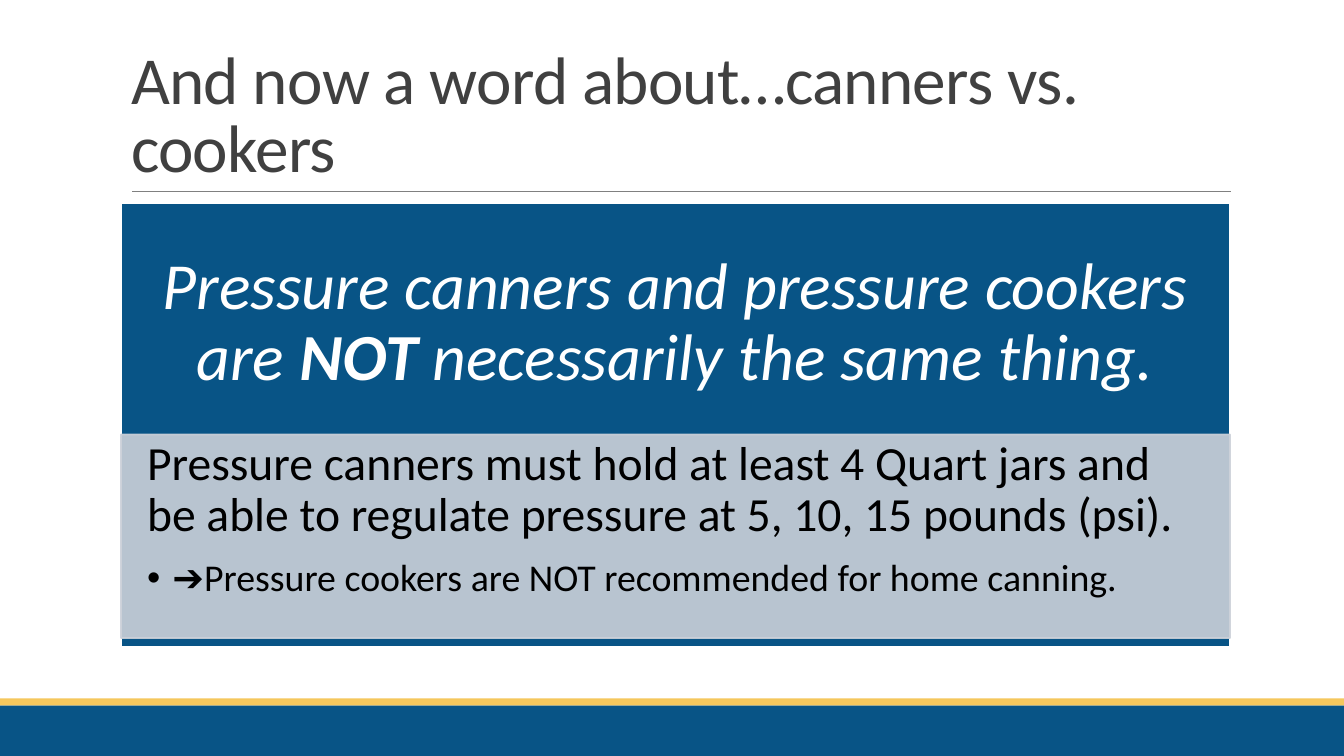
from dataclasses import dataclass

from lxml import etree
from pptx import Presentation
from pptx.dml.color import RGBColor
from pptx.enum.shapes import MSO_CONNECTOR, MSO_SHAPE
from pptx.enum.text import MSO_ANCHOR, MSO_AUTO_SIZE, PP_ALIGN
from pptx.oxml.ns import qn
from pptx.util import Pt

RECTANGLE = MSO_SHAPE.RECTANGLE
STRAIGHT = MSO_CONNECTOR.STRAIGHT
TOP, MIDDLE, BOTTOM = MSO_ANCHOR.TOP, MSO_ANCHOR.MIDDLE, MSO_ANCHOR.BOTTOM
LEFT, CENTER = PP_ALIGN.LEFT, PP_ALIGN.CENTER
NO_FIT = MSO_AUTO_SIZE.NONE

EMU_PER_PX = 9144  # 100 px to the inch
SLIDE_W, SLIDE_H = 1333, 750
PANEL_LEFT, PANEL_W = 120, 1100


@dataclass(frozen=True)
class Theme:
    font: str = "Calibri"
    blue: str = "085486"
    gold: str = "F5C75D"
    mist: str = "CCD1D9"
    rule: str = "808080"
    title_ink: str = "404040"
    white: str = "FFFFFF"
    black: str = "000000"
    title_size: int = 48
    headline_size: int = 47
    body_size: int = 34
    bullet_size: int = 27
    mist_opacity: int = 90


THEME = Theme()


def px(length):
    return length * EMU_PER_PX


def box(*lengths):
    return [px(length) for length in lengths]


def apply(target, values):
    for name, value in values.items():
        setattr(target, name, value)


def set_opacity(color_format_owner, percent):
    """Add an alpha value to the solid colour of a fill or line."""
    for color in color_format_owner.iter(qn("a:srgbClr")):
        etree.SubElement(color, qn("a:alpha")).set("val", str(percent * 1000))


def add_band(slide, bounds, color, outline=None, opacity=None):
    band = slide.shapes.add_shape(RECTANGLE, *box(*bounds))
    band.shadow.inherit = False
    band.fill.solid()
    band.fill.fore_color.rgb = RGBColor.from_string(color)
    if outline:
        band.line.color.rgb = RGBColor.from_string(outline)
        band.line.width = Pt(1.25)
    else:
        band.line.fill.background()
    if opacity:
        set_opacity(band.fill._xPr, opacity)
    return band


def add_rule(slide, left, right, y):
    rule = slide.shapes.add_connector(STRAIGHT, *box(left, y, right, y))
    rule.line.color.rgb = RGBColor.from_string(THEME.rule)
    rule.line.width = Pt(0.5)
    etree.SubElement(rule.line._get_or_add_ln().getparent(), qn("a:effectLst"))


def set_frame(frame, anchor, inset_x, inset_y):
    apply(frame, {
        "word_wrap": True,
        "auto_size": NO_FIT,
        "vertical_anchor": anchor,
        "margin_left": px(inset_x),
        "margin_right": px(inset_x),
        "margin_top": px(inset_y),
        "margin_bottom": px(inset_y),
    })


def write(paragraph, runs, size, color, **layout):
    """Fill a paragraph with (text, font values) runs."""
    apply(paragraph, {"alignment": LEFT, "line_spacing": 0.9,
                      "space_before": Pt(0), **layout})
    for text, emphasis in runs:
        run = paragraph.add_run()
        run.text = text
        apply(run.font, {"name": THEME.font, "size": Pt(size), **emphasis})
        run.font.color.rgb = RGBColor.from_string(color)


def add_bullet(paragraph, hang):
    properties = paragraph._p.get_or_add_pPr()
    properties.set("marL", str(px(hang)))
    properties.set("indent", str(-px(hang)))
    etree.SubElement(properties, qn("a:buFont")).set("typeface", "Arial")
    etree.SubElement(properties, qn("a:buChar")).set("char", "•")


def add_title(slide):
    title = slide.shapes.title
    title.left, title.top, title.width, title.height = box(PANEL_LEFT, 31, PANEL_W, 159)
    set_frame(title.text_frame, BOTTOM, 10, 5)
    heading = title.text_frame.paragraphs[0]
    write(heading, [("And now a word about…canners vs. cookers", {})],
          THEME.title_size, THEME.title_ink, line_spacing=0.85)
    heading.runs[0].font._element.set("spc", "-50")


def add_headline(slide):
    headline = slide.shapes.add_textbox(*box(PANEL_LEFT, 202, PANEL_W, 238))
    set_frame(headline.text_frame, MIDDLE, 37, 37)
    write(headline.text_frame.paragraphs[0], [
        ("Pressure canners and pressure cookers are ", {"italic": True}),
        ("NOT", {"italic": True, "bold": True}),
        (" necessarily the same thing.", {"italic": True}),
    ], THEME.headline_size, THEME.white, alignment=CENTER)


def add_details(slide):
    details = add_band(slide, (PANEL_LEFT, 431, PANEL_W, 202), THEME.mist,
                       outline=THEME.mist, opacity=THEME.mist_opacity)
    set_opacity(details.line._get_or_add_ln(), THEME.mist_opacity)
    frame = details.text_frame
    set_frame(frame, TOP, 26, 5)
    write(frame.paragraphs[0],
          [("Pressure canners must hold at least 4 Quart jars and be able to "
            "regulate pressure at 5, 10, 15 pounds (psi).", {})],
          THEME.body_size, THEME.black, space_after=Pt(12))
    advice = frame.add_paragraph()
    add_bullet(advice, 25)
    write(advice, [("➔Pressure cookers are NOT recommended for home canning.", {})],
          THEME.bullet_size, THEME.black, level=1, space_after=Pt(4))


def main():
    deck = Presentation()
    deck.slide_width, deck.slide_height = box(SLIDE_W, SLIDE_H)
    slide = deck.slides.add_slide(deck.slide_layouts.get_by_name("Title Only"))

    # Title and the rule under it
    add_rule(slide, 131, 1221, 190)
    add_title(slide)

    # Footer stripes
    add_band(slide, (0, 693, SLIDE_W, 7), THEME.gold)
    add_band(slide, (0, 700, SLIDE_W, 50), THEME.blue)

    # Message panel
    add_band(slide, (PANEL_LEFT, 202, PANEL_W, 440), THEME.blue, outline=THEME.white)
    add_headline(slide)
    add_details(slide)

    deck.save("out.pptx")


if __name__ == "__main__":
    main()
